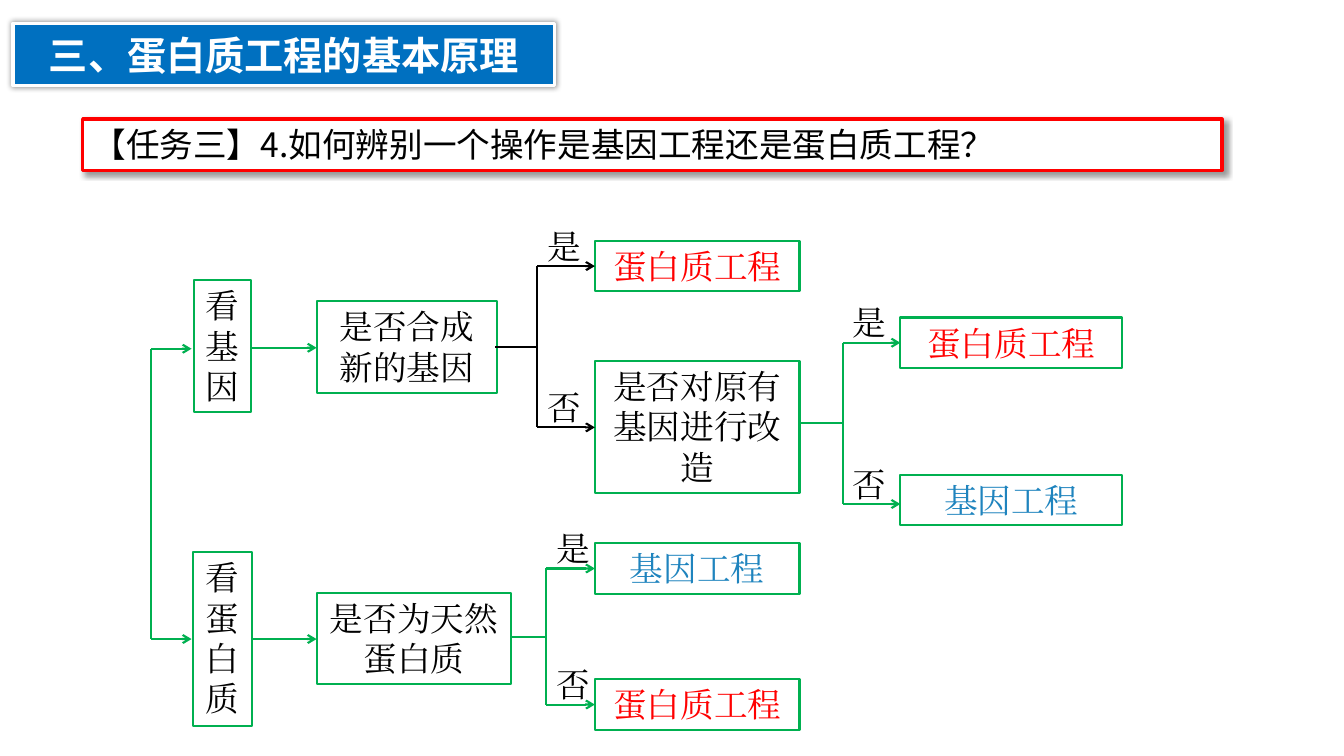
from dataclasses import dataclass
from typing import Optional

from lxml import etree
from pptx import Presentation
from pptx.dml.color import RGBColor
from pptx.enum.shapes import MSO_CONNECTOR, MSO_SHAPE
from pptx.enum.text import MSO_ANCHOR, PP_ALIGN
from pptx.oxml.ns import qn
from pptx.util import Inches, Pt

RECT = MSO_SHAPE.RECTANGLE
STRAIGHT = MSO_CONNECTOR.STRAIGHT
TOP, MIDDLE = MSO_ANCHOR.TOP, MSO_ANCHOR.MIDDLE
LEFT, CENTER = PP_ALIGN.LEFT, PP_ALIGN.CENTER

COLORS = {
    "green": "00B050", "black": "000000", "red": "FF0000", "blue": "1F84BE",
    "banner": "0070C0", "white": "FFFFFF", "frame": "FEFEFE",
}
SERIF, SANS = "Times New Roman", "Noto Sans CJK SC"
LABEL_W, LABEL_H, LABEL_RISE = 0.54, 0.5, 0.45


@dataclass
class Box:
    text: str
    x: float
    y: float
    w: float
    h: float
    color: str = "black"
    line: str = "green"
    line_pt: float = 1.5
    fill: Optional[str] = None
    size: int = 24
    font: str = SERIF
    bold: bool = False
    align: PP_ALIGN = CENTER
    anchor: MSO_ANCHOR = TOP
    shadow: Optional[tuple[float, int]] = None  # distance in points, angle in degrees


@dataclass
class Fork:
    trunk_x: float
    top: float
    bottom: float
    tip_x: float
    color: str = "green"
    stem: Optional[tuple[float, float]] = None  # start of the stem
    labelled: bool = True


def rgb(name: str) -> RGBColor:
    return RGBColor.from_string(COLORS[name])


def add_run(p, text: str, color: str, size: int = 24, font: str = SERIF, bold: bool = False) -> None:
    r = p.add_run()
    r.text = text
    r.font.size, r.font.name, r.font.bold = Pt(size), font, bold
    r.font.color.rgb = rgb(color)
    etree.SubElement(r.font._element, qn("a:ea")).set("typeface", font)


def add_shadow(sp, distance: float, angle: int) -> None:
    effects = sp._element.spPr.find(qn("a:effectLst"))
    outer = etree.SubElement(effects, qn("a:outerShdw"), blurRad=str(Pt(4)),
                             dist=str(Pt(distance)), dir=str(angle * 60000),
                             algn="tl", rotWithShape="0")
    tint = etree.SubElement(outer, qn("a:srgbClr"), val=COLORS["black"])
    etree.SubElement(tint, qn("a:alpha"), val="40000")


def add_box(s, box: Box) -> None:
    sp = s.shapes.add_shape(RECT, Inches(box.x), Inches(box.y), Inches(box.w), Inches(box.h))
    sp.shadow.inherit = False
    if box.shadow:
        add_shadow(sp, *box.shadow)
    if box.fill:
        sp.fill.solid()
        sp.fill.fore_color.rgb = rgb(box.fill)
    else:
        sp.fill.background()
    sp.line.color.rgb = rgb(box.line)
    sp.line.width = Pt(box.line_pt)
    tf = sp.text_frame
    tf.word_wrap = True
    tf.vertical_anchor = box.anchor
    p = tf.paragraphs[0]
    p.alignment = box.align
    add_run(p, box.text, box.color, box.size, box.font, box.bold)


def add_line(s, x1: float, y1: float, x2: float, y2: float, color: str, arrow: bool = False) -> None:
    c = s.shapes.add_connector(STRAIGHT, Inches(x1), Inches(y1), Inches(x2), Inches(y2))
    c.line.color.rgb = rgb(color)
    c.line.width = Pt(1.5)
    if arrow:
        etree.SubElement(c.line._get_or_add_ln(), qn("a:tailEnd"), type="arrow")
    etree.SubElement(c._element.spPr, qn("a:effectLst"))


def add_label(s, text: str, x: float, y: float) -> None:
    tf = s.shapes.add_textbox(Inches(x), Inches(y), Inches(LABEL_W), Inches(LABEL_H)).text_frame
    tf.word_wrap = False
    p = tf.paragraphs[0]
    p.alignment = LEFT
    add_run(p, text, "black")


def add_fork(s, fork: Fork) -> None:
    if fork.stem:
        x, y = fork.stem
        add_line(s, x, y, fork.trunk_x, y, fork.color)
    add_line(s, fork.trunk_x, fork.top, fork.trunk_x, fork.bottom, fork.color)
    for answer, y in (("是", fork.top), ("否", fork.bottom)):
        add_line(s, fork.trunk_x, y, fork.tip_x, y, fork.color, arrow=True)
        if fork.labelled:
            add_label(s, answer, fork.trunk_x, y - LABEL_RISE)


BOXES = [
    # Heading and task
    Box("三、蛋白质工程的基本原理", 0.13, 0.23, 5.37, 0.62, "white", "frame", 2.25, "banner",
        28, SANS, True, anchor=MIDDLE, shadow=(0, 10)),
    Box("【任务三】4.如何辨别一个操作是基因工程还是蛋白质工程？", 0.82, 1.18, 11.3, 0.51,
        "black", "red", 2.25, "white", font=SANS, align=LEFT, shadow=(3, 45)),
    # Gene branch
    Box("看基因", 1.92, 2.78, 0.57, 1.31),
    Box("是否合成新的基因", 3.14, 2.99, 1.79, 0.91),
    Box("蛋白质工程", 5.9, 2.39, 2.03, 0.5, "red"),
    Box("是否对原有基因进行改造", 5.9, 3.58, 2.03, 1.31),
    Box("蛋白质工程", 8.93, 3.15, 2.2, 0.5, "red"),
    Box("基因工程", 8.93, 4.71, 2.2, 0.5, "blue"),
    # Protein branch
    Box("看蛋白质", 1.91, 5.48, 0.59, 1.72),
    Box("是否为天然蛋白质", 3.14, 5.88, 1.93, 0.91),
    Box("基因工程", 5.9, 5.39, 2.03, 0.5, "blue"),
    Box("蛋白质工程", 5.9, 6.74, 2.03, 0.5, "red"),
]
FORKS = [
    Fork(1.5, 3.46, 6.34, 1.9, labelled=False),
    Fork(5.33, 2.64, 4.24, 5.9, "black", stem=(4.91, 3.44)),
    Fork(8.36, 3.4, 5, 8.93, stem=(7.94, 4.2)),
    Fork(5.42, 5.64, 6.99, 5.9, stem=(5.07, 6.32)),
]


def main() -> None:
    prs = Presentation()
    prs.slide_width, prs.slide_height = Inches(13.33), Inches(7.5)
    s = prs.slides.add_slide(prs.slide_layouts[6])
    for box in BOXES:
        add_box(s, box)
    for fork in FORKS:
        add_fork(s, fork)
    # Arrows from each starting point to its question
    for y in (3.45, 6.34):
        add_line(s, 2.5, y, 3.14, y, "green", arrow=True)
    prs.save("out.pptx")


if __name__ == "__main__":
    main()
